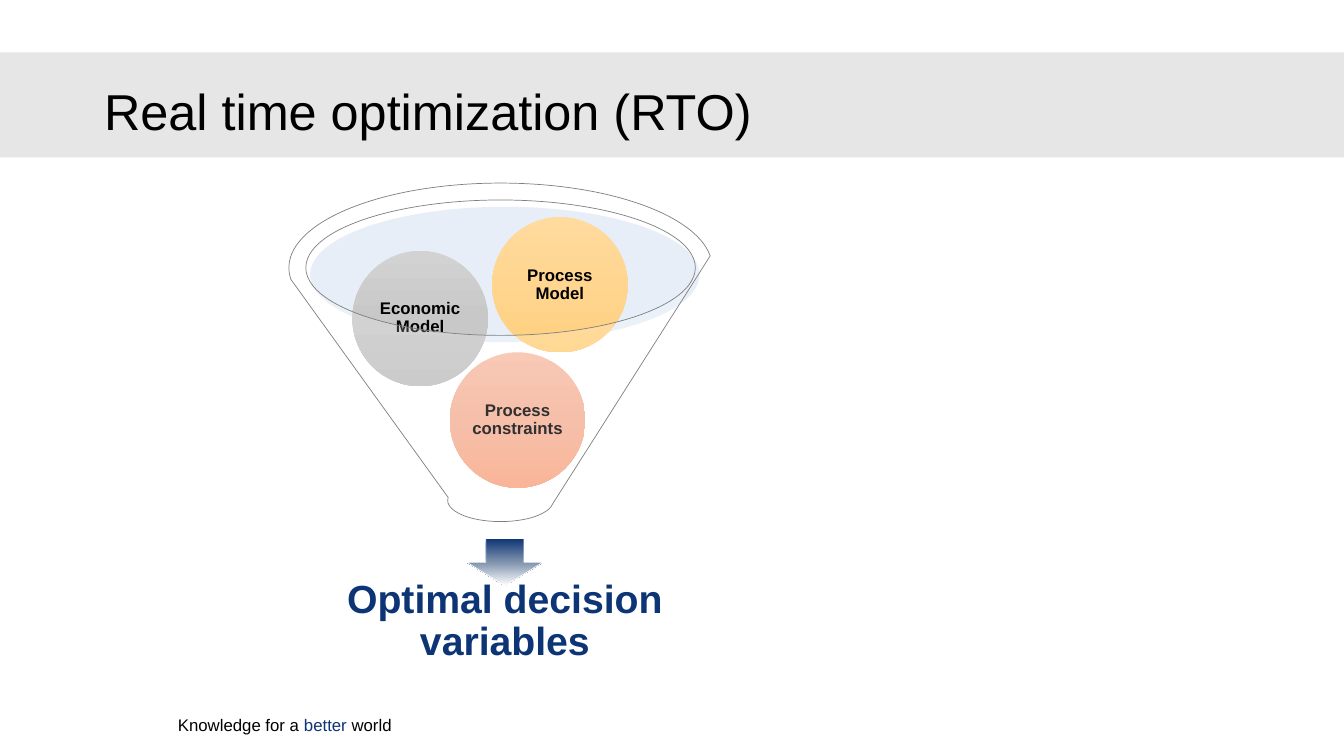
from dataclasses import dataclass

import lxml.etree
import pptx
import pptx.dml.color
import pptx.enum.shapes
import pptx.enum.text
import pptx.oxml.ns
import pptx.util

SHAPES = pptx.enum.shapes.MSO_SHAPE
ALIGN = pptx.enum.text.PP_ALIGN
ANCHOR = pptx.enum.text.MSO_ANCHOR
COLUMNS, ROWS = 160, 90
CELL = pptx.util.Inches(13.333) / COLUMNS
NAVY, BLACK, WHITE = "0D3475", "000000", "FFFFFF"


@dataclass
class Box:
    """A rectangle in grid columns and rows."""
    left: float
    top: float
    width: float
    height: float

    def inner(self, left, top, width, height):
        """Return an inner box given as shares of this one."""
        return Box(self.left + left * self.width, self.top + top * self.height,
                   width * self.width, height * self.height)

    def lengths(self):
        """Return left, top, width and height as slide lengths."""
        return [round(value * CELL) for value in (self.left, self.top, self.width, self.height)]


def color(value):
    """Turn a hex string into a colour."""
    return pptx.dml.color.RGBColor.from_string(value)


def add_element(parent, tag, **attributes):
    """Append a drawing element with the given attributes."""
    element = lxml.etree.SubElement(parent, pptx.oxml.ns.qn(tag))
    for name, value in attributes.items():
        element.set(name, str(value))
    return element


def set_gradient(shape, stops):
    """Fill a shape from top to bottom with (percent, hex) stops."""
    shape.fill.gradient()
    gradient = shape.element.spPr.find(pptx.oxml.ns.qn("a:gradFill"))
    for child in list(gradient):
        gradient.remove(child)
    stop_list = add_element(gradient, "a:gsLst")
    for percent, value in stops:
        stop = add_element(stop_list, "a:gs", pos=percent * 1000)
        add_element(stop, "a:srgbClr", val=value)
    add_element(gradient, "a:lin", ang=5400000, scaled=0)


def add_shape(slide, kind, box, fill=None, opacity=None, gradient=None, line=None):
    """Add a preset shape with a solid or gradient fill."""
    shape = slide.shapes.add_shape(kind, *box.lengths())
    shape.shadow.inherit = False
    if gradient:
        set_gradient(shape, gradient)
    else:
        shape.fill.solid()
        shape.fill.fore_color.rgb = color(fill)
    if opacity is not None:
        solid = shape.element.spPr.find(pptx.oxml.ns.qn("a:solidFill"))
        add_element(solid[0], "a:alpha", val=opacity * 1000)
    if line:
        shape.line.color.rgb = color(line)
        shape.line.width = pptx.util.Pt(0.5)
    else:
        shape.line.fill.background()
    return shape


def write_text(shape, runs, size, bold=False, align=ALIGN.LEFT, anchor=ANCHOR.MIDDLE,
               spacing=0.9, insets=(0.1, 0.05)):
    """Write one paragraph of (text, hex) runs into a shape."""
    frame = shape.text_frame
    frame.word_wrap = True
    frame.vertical_anchor = anchor
    frame.margin_left = frame.margin_right = pptx.util.Inches(insets[0])
    frame.margin_top = frame.margin_bottom = pptx.util.Inches(insets[1])
    paragraph = frame.paragraphs[0]
    paragraph.alignment = align
    paragraph.line_spacing = spacing
    for text, value in runs:
        run = paragraph.add_run()
        run.text = text
        run.font.name = "Arial"
        run.font.size = pptx.util.Pt(size)
        run.font.bold = bold
        run.font.color.rgb = color(value)


def add_text(slide, box, runs, size, **form):
    """Add a text box with one formatted paragraph."""
    write_text(slide.shapes.add_textbox(*box.lengths()), runs, size, **form)


def add_footer(slide, box):
    """Add the motto at the bottom of the slide."""
    motto = [("Knowledge for a ", BLACK), ("better ", NAVY), ("world", BLACK)]
    add_text(slide, box, motto, 12, anchor=ANCHOR.TOP, spacing=1.0)


def add_header(slide, box):
    """Add the grey band and the title over it."""
    add_shape(slide, SHAPES.RECTANGLE, box, fill="E7E6E6")
    add_text(slide, box.inner(0.07, -0.11, 0.86, 1.39),
             [("Real time optimization (RTO)", BLACK)], 36)


def add_funnel(slide, box):
    """Add the funnel, the balls in it and the result below it."""
    add_shape(slide, SHAPES.OVAL, box.inner(0.05, 0.07, 0.92, 0.4), fill="C4D5EB", opacity=40)
    add_shape(slide, SHAPES.DOWN_ARROW, box.inner(0.42, 1.05, 0.18, 0.14), line=WHITE,
              gradient=[(0, NAVY), (52, "8497B0"), (100, WHITE)])
    add_text(slide, box.inner(-0.1, 1.16, 1.22, 0.27), [("Optimal decision variables", NAVY)],
             28, bold=True, align=ALIGN.CENTER, insets=(0.22, 0.22))
    balls = [
        ("Process constraints", 0.38, 0.5, ("F7BDA5", "F5B196", "F8A582")),
        ("Economic Model", 0.15, 0.2, ("D2D2D2", "C8C8C8", "C0C0C0")),
        ("Process Model", 0.48, 0.1, ("FFDB9E", "FFD590", "FFD07C")),
    ]
    for label, left, top, shades in balls:
        ball = add_shape(slide, SHAPES.OVAL, box.inner(left, top, 0.32, 0.4),
                         gradient=list(zip((0, 50, 100), shades)))
        write_text(ball, [(label, BLACK)], 12, bold=True, align=ALIGN.CENTER,
                   insets=(0.02, 0.02))
    add_shape(slide, SHAPES.FUNNEL, box, fill=WHITE, opacity=19, line="808080")


def main():
    """Build the slide and save it."""
    presentation = pptx.Presentation()
    presentation.slide_width = round(COLUMNS * CELL)
    presentation.slide_height = round(ROWS * CELL)
    slide = presentation.slides.add_slide(presentation.slide_layouts[6])
    add_footer(slide, Box(20, 84.5, 29.5, 3.6))
    add_header(slide, Box(0, 6.25, COLUMNS, 12.5))
    add_funnel(slide, Box(34.4, 21.8, 50.4, 40.3))
    presentation.save("out.pptx")


if __name__ == "__main__":
    main()
